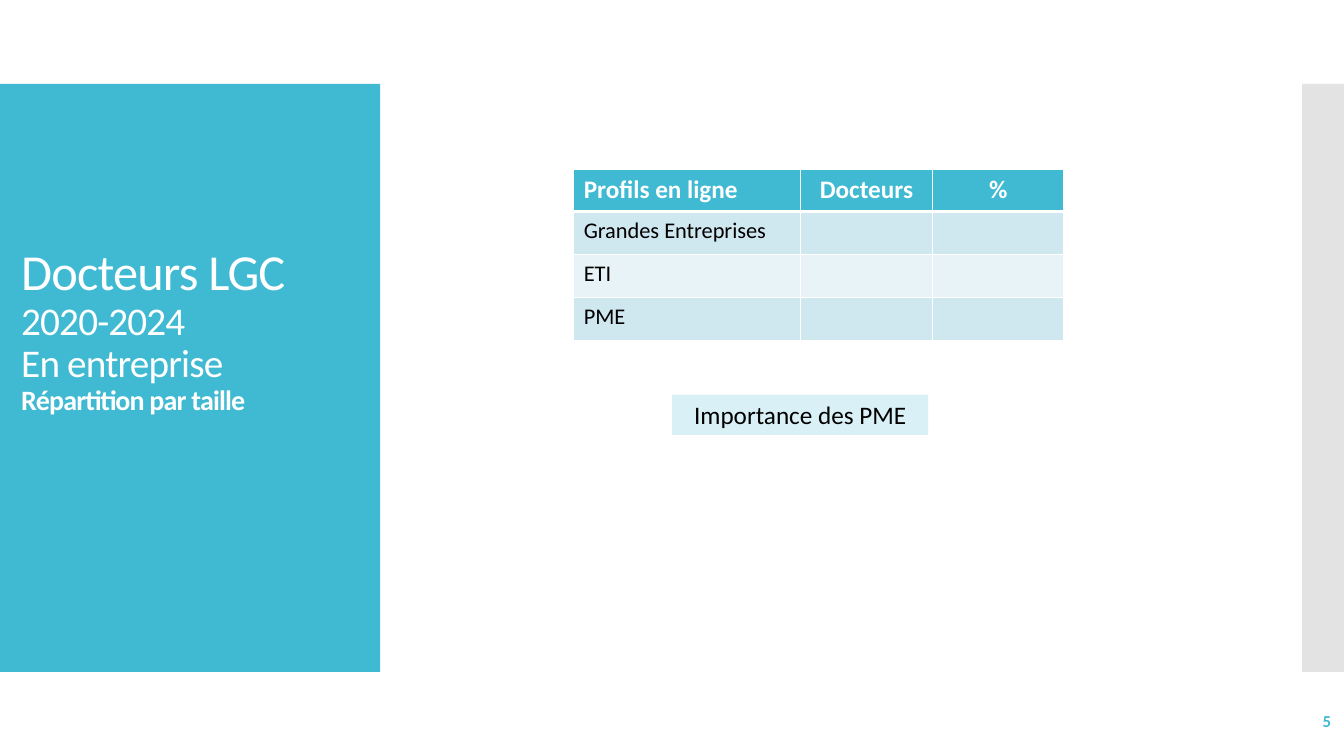
from dataclasses import dataclass

from lxml import etree
from pptx import Presentation
from pptx import util as u
from pptx.dml.color import RGBColor
from pptx.enum import shapes, text
from pptx.oxml import ns

WIDTH, HEIGHT = u.Inches(13.33), u.Inches(7.5)


@dataclass(frozen=True)
class Theme:
    font: str = "Calibri"
    accent: str = "40BAD2"
    white: str = "FFFFFF"
    ink: str = "000000"
    grey: str = "C8C8C8"
    callout: str = "D9F1F6"
    bands: tuple = ("CFE7EE", "E8F3F7")
    heading: int = 36
    subheading: int = 28
    detail: int = 20
    label: int = 18
    body: int = 16
    small: int = 12


THEME = Theme()
LEFT, CENTER, RIGHT = text.PP_ALIGN.LEFT, text.PP_ALIGN.CENTER, text.PP_ALIGN.RIGHT


def across(percent):
    return round(WIDTH * percent / 100)


def down(percent):
    return round(HEIGHT * percent / 100)


def area(left, top, width, height):
    """Turn shares of the slide, in percent, into lengths."""
    return across(left), down(top), across(width), down(height)


def add_xml(parent, tag, **attributes):
    return etree.SubElement(parent, ns.qn(tag), attributes)


def style(paragraph, size, color, bold=False, align=LEFT):
    paragraph.alignment = align
    for run in paragraph.runs:
        run.font.name = THEME.font
        run.font.size = u.Pt(size)
        run.font.bold = bold
        run.font.color.rgb = RGBColor.from_string(color)


def add_block(slide, place, color, opacity=None):
    block = slide.shapes.add_shape(shapes.MSO_SHAPE.RECTANGLE, *area(*place))
    block.shadow.inherit = False
    block.line.fill.background()
    block.fill.solid()
    block.fill.fore_color.rgb = RGBColor.from_string(color)
    if opacity is not None:
        shade = block.fill._xPr.find(".//" + ns.qn("a:srgbClr"))
        add_xml(shade, "a:alpha", val=str(opacity * 1000))
    return block


def set_title(slide, place, lines):
    title = slide.shapes.title
    title.left, title.top, title.width, title.height = area(*place)
    frame = title.text_frame
    frame.text = "\n".join(line for line, _, _ in lines)
    frame.auto_size = text.MSO_AUTO_SIZE.NONE
    frame.vertical_anchor = text.MSO_ANCHOR.MIDDLE
    frame.margin_bottom = down(12.8)  # lifts the lines above the middle
    for paragraph, (_, size, bold) in zip(frame.paragraphs, lines):
        paragraph.line_spacing = 0.9
        paragraph.space_before = u.Pt(0)
        style(paragraph, size, THEME.white, bold)
        for run in paragraph.runs:
            run.font._element.set("spc", "-60")


def set_borders(cell, top, bottom):
    properties = cell._tc.get_or_add_tcPr()
    for side, points in (("L", 1), ("R", 1), ("T", top), ("B", bottom)):
        border = add_xml(properties, "a:ln" + side, w=str(u.Pt(points)))
        fill = add_xml(border, "a:solidFill")
        add_xml(fill, "a:srgbClr", val=THEME.white)


def add_size_table(slide, left, top, columns, heights, rows):
    place = area(left, top, sum(columns), sum(heights))
    table = slide.shapes.add_table(len(rows), len(columns), *place).table
    for column, width in zip(table.columns, columns):
        column.width = across(width)
    for r, (values, height) in enumerate(zip(rows, heights)):
        table.rows[r].height = down(height)
        header = r == 0
        color = THEME.accent if header else THEME.bands[(r - 1) % 2]
        for c, value in enumerate(values):
            cell = table.cell(r, c)
            set_borders(cell, top=3 if r == 1 else 1, bottom=3 if header else 1)
            cell.fill.solid()
            cell.fill.fore_color.rgb = RGBColor.from_string(color)
            cell.text_frame.text = value
            style(cell.text_frame.paragraphs[0],
                  THEME.label if header else THEME.body,
                  THEME.white if header else THEME.ink,
                  bold=header, align=CENTER if c else LEFT)


def add_callout(slide, place, message):
    frame = add_block(slide, place, THEME.callout).text_frame
    frame.text = message
    style(frame.paragraphs[0], THEME.label, THEME.ink, align=CENTER)


def add_page_number(slide, place, number):
    frame = slide.shapes.add_textbox(*area(*place)).text_frame
    frame.word_wrap = True
    frame.vertical_anchor = text.MSO_ANCHOR.MIDDLE
    frame.text = number
    style(frame.paragraphs[0], THEME.small, THEME.accent, bold=True, align=RIGHT)


def main():
    deck = Presentation()
    deck.slide_width, deck.slide_height = WIDTH, HEIGHT
    slide = deck.slides.add_slide(deck.slide_layouts.get_by_name("Title Only"))

    # Side panels, with the title brought in front of them
    add_block(slide, (0, 11.11, 28.28, 77.78), THEME.accent)
    add_block(slide, (96.88, 11.11, 3.12, 77.78), THEME.grey, opacity=50)
    slide.shapes._spTree.append(slide.shapes.title._element)
    set_title(slide, (0.83, 16.4, 28.28, 67.07), [
        ("Docteurs LGC", THEME.heading, False),
        ("2020-2024", THEME.subheading, False),
        ("En entreprise", THEME.subheading, False),
        ("Répartition par taille", THEME.detail, True),
    ])

    # Doctors by company size
    add_size_table(slide, 42.69, 22.4, (16.88, 9.8, 9.8), (5.6, 5.7, 5.7, 5.7), [
        ("Profils en ligne", "Docteurs", "%"),
        ("Grandes Entreprises", "", ""),
        ("ETI", "", ""),
        ("PME", "", ""),
    ])

    # Page number and conclusion
    add_page_number(slide, (87.25, 92.67, 12.53, 5.33), "5")
    add_callout(slide, (50.02, 52.2, 19.05, 5.33), "Importance des PME")

    deck.save("out.pptx")


if __name__ == "__main__":
    main()
